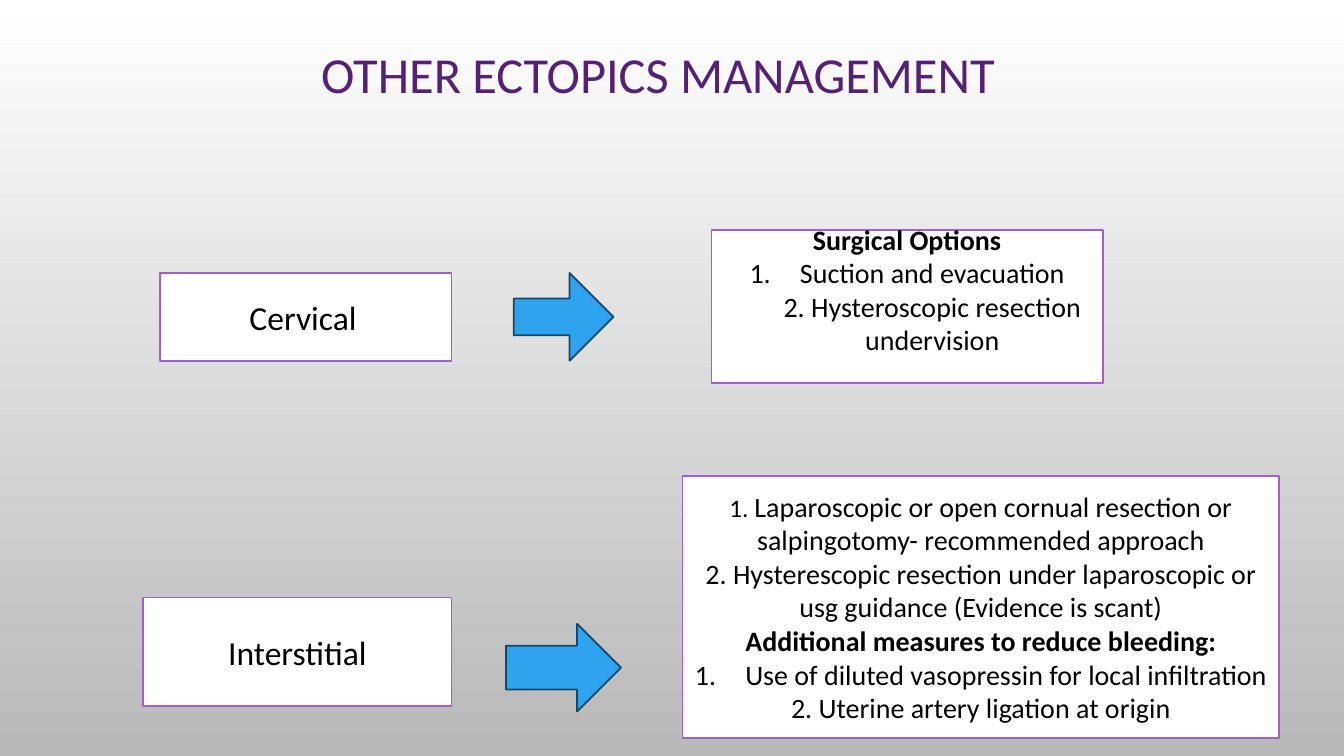
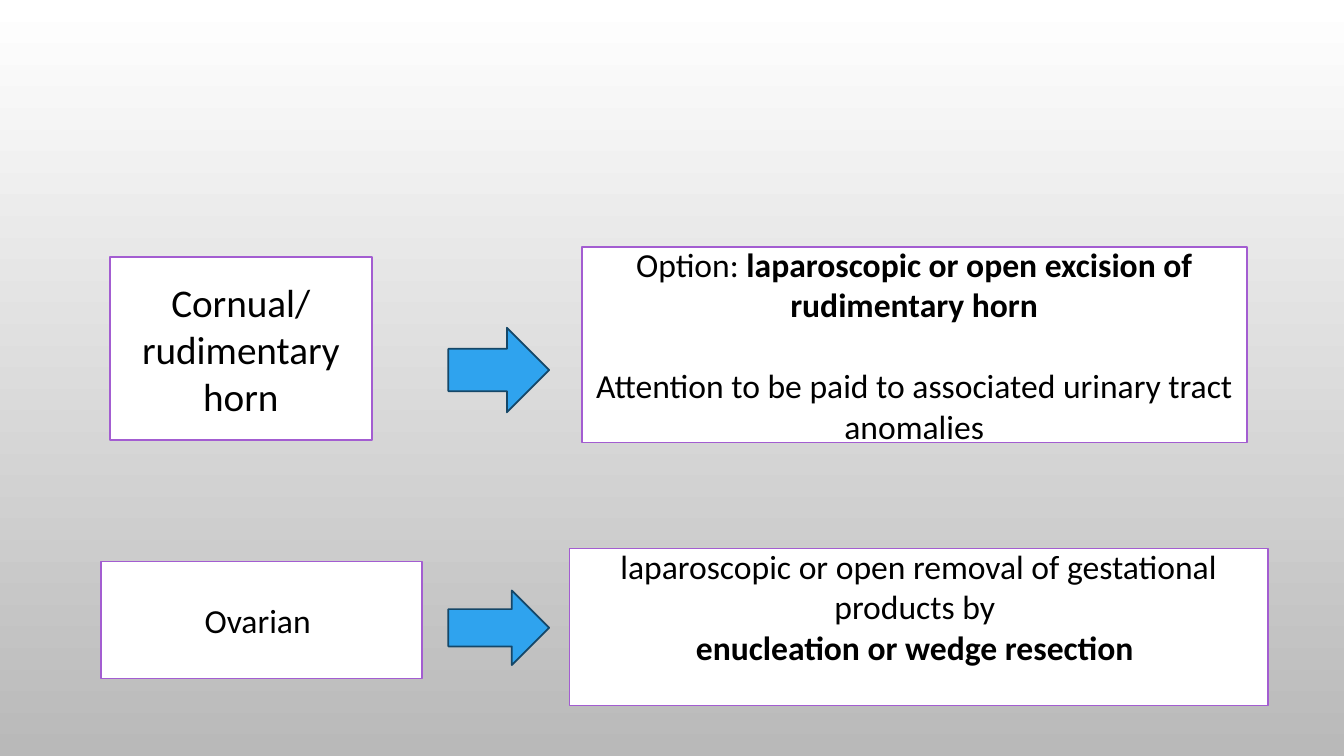
from dataclasses import dataclass

import pptx
import pptx.dml.color
import pptx.enum.shapes
import pptx.enum.text
import pptx.oxml
import pptx.oxml.ns
import pptx.util
from lxml import etree

Cm, Pt = pptx.util.Cm, pptx.util.Pt
SHAPES = pptx.enum.shapes.MSO_SHAPE


@dataclass(frozen=True)
class Theme:
    font: str = "Calibri"
    title: str = "542176"
    ink: str = "000000"
    box: str = "FFFFFF"
    box_edge: str = "A35DD1"
    arrow: str = "2FA3EE"
    arrow_edge: str = "154768"
    backdrop: tuple = ("FFFFFF", "B9B9B9")
    edge_width: float = 1.25
    title_size: int = 36
    large: int = 28
    medium: int = 24
    body: int = 20
    small: int = 18
    line_factor: float = 1.22
    inset: float = 0.13
    indent: float = 1.27


THEME = Theme()
TITLE_PLACE = (2.34, 0, 28.78, 3.89)

SLIDES = [
    {
        "title": "OTHER ECTOPICS MANAGEMENT ",
        "rows": [
            {
                "site": [{"runs": [("Cervical", {}), (" ", {"size": THEME.small})]}],
                "site_place": (4.04, 6.88, 7.34, 2.21),
                "arrow_place": (12.95, 6.88, 2.51, 2.21),
                "arrow_shaft": 0.42,
                "options": [
                    {"runs": [("Surgical Options", {"bold": True})]},
                    {"runs": [("Suction and evacuation", {})], "number": True},
                    {"runs": [("2. Hysteroscopic resection undervision", {})], "indent": True},
                ],
                "options_place": (17.93, 5.79, 9.86, 3.86),
                "options_size": THEME.body,
                "lines_below": 1,
            },
            {
                "site": [{"runs": [("Interstitial", {})]}],
                "site_place": (3.61, 15.06, 7.77, 2.74),
                "arrow_place": (12.75, 15.72, 2.9, 2.21),
                "options": [
                    {"runs": [
                        ("1. ", {"size": THEME.small}),
                        ("Laparoscopic or open cornual resection or salpingotomy- recommended approach", {}),
                    ]},
                    {"runs": [("2. Hysterescopic resection under laparoscopic or usg guidance (Evidence is scant)", {})]},
                    {"runs": [("Additional measures to reduce bleeding:", {"bold": True})]},
                    {"runs": [("Use of diluted vasopressin for local infiltration", {})], "number": True},
                    {"runs": [("2. Uterine artery ligation at origin", {})]},
                ],
                "options_place": (17.2, 11.99, 15.04, 6.6),
                "options_size": THEME.body,
            },
        ],
    },
    {
        "rows": [
            {
                "site": [{"runs": [("Cornual/", {})]}, {"runs": [("rudimentary horn", {})]}],
                "site_place": (2.77, 6.48, 6.6, 4.6),
                "site_size": THEME.large,
                "arrow_place": (11.3, 8.26, 2.54, 2.13),
                "options": [
                    {"runs": [
                        ("Option: ", {}),
                        ("laparoscopic or open excision of rudimentary horn", {"bold": True}),
                    ]},
                    {
                        "runs": [("Attention to be paid to associated urinary tract anomalies", {})],
                        "lines_above": 1,
                    },
                ],
                "options_place": (14.66, 6.22, 16.76, 4.93),
            },
            {
                "site": [{"runs": [("Ovarian ", {})]}],
                "site_place": (2.54, 14.15, 8.1, 2.95),
                "arrow_place": (11.3, 14.88, 2.54, 1.88),
                "options": [
                    {"runs": [("laparoscopic or open removal of gestational products by ", {})]},
                    {"runs": [("enucleation or wedge resection ", {"bold": True})]},
                ],
                "options_place": (14.35, 13.82, 17.6, 3.96),
                "lines_below": 1,
            },
        ],
    },
]


def rgb(code):
    return pptx.dml.color.RGBColor.from_string(code)


def place_cm(place):
    return [Cm(length) for length in place]


def set_indent(paragraph, numbered):
    properties = paragraph._p.get_or_add_pPr()
    properties.set("marL", str(Cm(THEME.indent)))
    properties.set("indent", str(-Cm(THEME.indent) if numbered else 0))
    if numbered:
        number = etree.SubElement(properties, pptx.oxml.ns.qn("a:buAutoNum"))
        number.set("type", "arabicPeriod")


def write_text(shape, paragraphs, size=THEME.medium, color=THEME.ink, spacing=None, lines_below=0):
    frame = shape.text_frame
    frame.word_wrap = True
    frame.vertical_anchor = pptx.enum.text.MSO_ANCHOR.MIDDLE
    line_height = size * THEME.line_factor
    frame.margin_top = Cm(THEME.inset)
    frame.margin_bottom = Cm(THEME.inset) + Pt(line_height * lines_below)
    for index, content in enumerate(paragraphs):
        paragraph = frame.add_paragraph() if index else frame.paragraphs[0]
        paragraph.alignment = pptx.enum.text.PP_ALIGN.CENTER
        if spacing:
            paragraph.line_spacing = spacing
        if "lines_above" in content:
            paragraph.space_before = Pt(line_height * content["lines_above"])
        if content.get("number") or content.get("indent"):
            set_indent(paragraph, content.get("number", False))
        for text, style in content["runs"]:
            run = paragraph.add_run()
            run.text = text
            run.font.name = THEME.font
            run.font.size = Pt(style.get("size", size))
            run.font.bold = style.get("bold", False)
            run.font.color.rgb = rgb(color)


def add_block(slide, preset, place, fill, edge):
    block = slide.shapes.add_shape(preset, *place_cm(place))
    block.shadow.inherit = False
    block.fill.solid()
    block.fill.fore_color.rgb = rgb(fill)
    block.line.color.rgb = rgb(edge)
    block.line.width = Pt(THEME.edge_width)
    return block


def add_text_box(slide, place, paragraphs, **style):
    box = add_block(slide, SHAPES.RECTANGLE, place, THEME.box, THEME.box_edge)
    write_text(box, paragraphs, **style)


def add_row(slide, row):
    add_text_box(slide, row["site_place"], row["site"], size=row.get("site_size", THEME.medium))
    add_text_box(
        slide, row["options_place"], row["options"],
        size=row.get("options_size", THEME.medium), lines_below=row.get("lines_below", 0),
    )
    arrow = add_block(slide, SHAPES.RIGHT_ARROW, row["arrow_place"], THEME.arrow, THEME.arrow_edge)
    arrow.adjustments[0] = row.get("arrow_shaft", 0.5)


def paint_backdrop(slide):
    fill = slide.background.fill
    fill.gradient()
    fill.gradient_angle = 270
    for stop, color in zip(fill.gradient_stops, THEME.backdrop):
        stop.color.rgb = rgb(color)


def main():
    deck = pptx.Presentation()
    deck.slide_width, deck.slide_height = Cm(33.87), Cm(19.05)
    for content in SLIDES:
        slide = deck.slides.add_slide(deck.slide_layouts[6])
        paint_backdrop(slide)
        if "title" in content:
            heading = slide.shapes.add_textbox(*place_cm(TITLE_PLACE))
            write_text(
                heading, [{"runs": [(content["title"], {})]}],
                size=THEME.title_size, color=THEME.title, spacing=0.9,
            )
        for row in content["rows"]:
            add_row(slide, row)
    deck.save("out.pptx")


if __name__ == "__main__":
    main()
